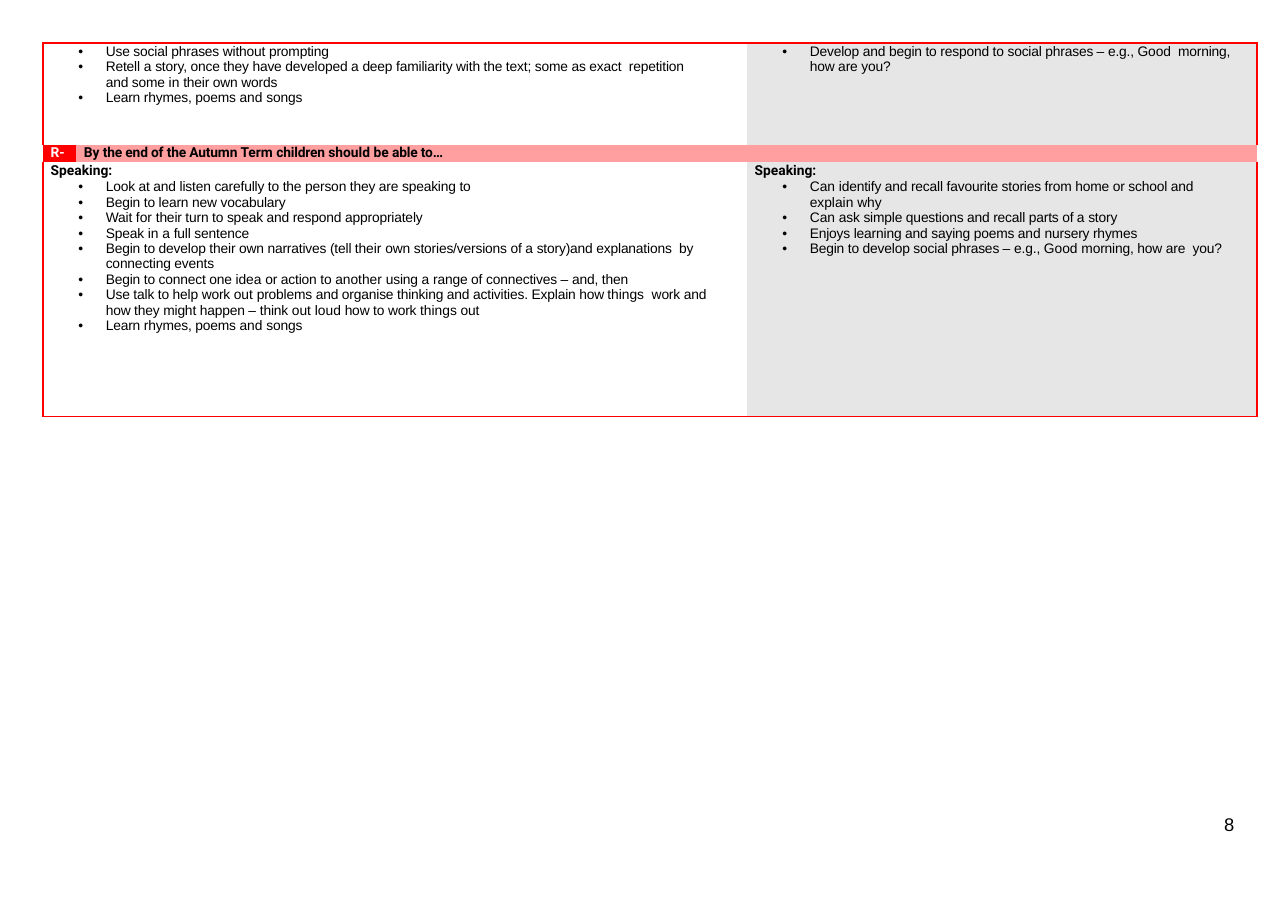
from lxml.etree import SubElement
from pptx import Presentation
from pptx.dml.color import RGBColor
from pptx.oxml import parse_xml
from pptx.oxml.ns import nsdecls, qn
from pptx.util import Inches, Pt

RED = RGBColor(0xFF, 0x00, 0x00)
PINK = RGBColor(0xFF, 0x9F, 0x9F)
GREY = RGBColor(0xE7, 0xE6, 0xE6)
BLACK = RGBColor(0x00, 0x00, 0x00)
WHITE = RGBColor(0xFF, 0xFF, 0xFF)

# A bar switches between slightly tight and normal letter spacing
EARLIER_GOALS = [
    "Use social phrases without prompting",
    "Retell |a |story, once they have developed |a |deep familiarity with the text; "
    "some as exact  repetition and some |in |their own words",
    "Learn rhymes, poems |and |songs",
]
EARLIER_SUPPORT = [
    "Develop and begin to respond to social phrases |– |e.g., Good  morning, how are you?",
]
AUTUMN_GOALS = [
    "Look at and listen carefully to the person they are speaking to",
    "Begin to learn new vocabulary",
    "Wait |for |their turn to speak and respond appropriately",
    "Speak |in a |full sentence",
    "Begin to develop their own narratives (tell |their |own stories/versions of |a |"
    "story)and explanations  by connecting events",
    "Begin to connect one |idea |or action to |another |using |a |range of connectives |"
    "– |and, then",
    "Use talk to help work |out |problems and organise thinking and activities. "
    "Explain how |things  |work and how they might happen |– |think |out loud |"
    "how to work |things |out",
    "Learn rhymes, poems |and |songs",
]
AUTUMN_SUPPORT = [
    "|Can |identify and recall favourite stories from home or school and  |explain why",
    "|Can |ask simple questions and recall parts of |a| story",
    "Enjoys learning and saying poems |and |nursery rhymes",
    "Begin to develop social phrases |– |e.g., |Good |morning, how are  you?",
]


class SlideWriter:
    def __init__(self, slide, font="Arial", heading_font="Roboto", size=9):
        self.s = slide
        self.font, self.heading_font, self.size = font, heading_font, size

    def runs(self, p, text, font=None, size=None, color=BLACK, bold=False):
        for i, part in enumerate(text.split("|")):
            if not part:
                continue
            r = p.add_run()
            r.text = part
            r.font.name = font or self.font
            r.font.size = Pt(size or self.size)
            r.font.bold = bold
            r.font.color.rgb = color
            r._r.get_or_add_rPr().set("spc", "0" if i % 2 else "-10")

    def indent(self, p, left, first=0):
        pPr = p._p.get_or_add_pPr()
        pPr.set("marL", str(Inches(left)))
        pPr.set("indent", str(Inches(first)))
        return pPr

    def heading(self, p, text, color=BLACK, line=None):
        self.indent(p, 0.07)
        if line:
            p.line_spacing = Pt(line)
        self.runs(p, text, self.heading_font, color=color, bold=True)

    def bullet(self, p, text):
        pPr = self.indent(p, 0.57, -0.25)
        SubElement(pPr, qn("a:buFont")).set("typeface", self.font)
        SubElement(pPr, qn("a:buChar")).set("char", "•")
        self.runs(p, text)

    def bullet_cell(self, cell, items, right, title=None):
        tf = cell.text_frame
        cell.margin_right = Inches(right)
        if title:
            self.heading(tf.paragraphs[0], title)
        for i, item in enumerate(items):
            p = tf.add_paragraph() if i or title else tf.paragraphs[0]
            self.bullet(p, item)

    def borders(self, cell, red_sides):
        tcPr = cell._tc.get_or_add_tcPr()
        for i, side in enumerate("LRTB"):
            paint = (f'<a:solidFill><a:srgbClr val="{RED}"/></a:solidFill>'
                     if side in red_sides else "<a:noFill/>")
            tcPr.insert(i, parse_xml(
                f'<a:ln{side} {nsdecls("a")} w="{Pt(1)}">{paint}</a:ln{side}>'))

    def table(self, x, y, widths, heights):
        tb = self.s.shapes.add_table(
            len(heights), len(widths), Inches(x), Inches(y),
            Inches(sum(widths)), Inches(sum(heights))).table
        tb.first_row = tb.horz_banding = False
        for col, w in zip(tb.columns, widths):
            col.width = Inches(w)
        for row, h in zip(tb.rows, heights):
            row.height = Inches(h)
        for cell in tb.iter_cells():
            cell.margin_left = cell.margin_right = 0
            cell.margin_top = cell.margin_bottom = 0
            cell.fill.background()
        return tb

    def fill(self, cell, color):
        cell.fill.solid()
        cell.fill.fore_color.rgb = color

    def label(self, x, y, w, h, text, size):
        tf = self.s.shapes.add_textbox(Inches(x), Inches(y), Inches(w), Inches(h)).text_frame
        tf.word_wrap = True
        tf.margin_left = tf.margin_right = tf.margin_bottom = 0
        tf.margin_top = Inches(0.01)
        p = tf.paragraphs[0]
        self.indent(p, 0.04)
        p.space_before = Pt(1.1)
        self.runs(p, text, size=size)


def main():
    prs = Presentation()
    prs.slide_width, prs.slide_height = Inches(11.69), Inches(8.27)
    w = SlideWriter(prs.slides.add_slide(prs.slide_layouts[6]))

    # Page number
    w.label(11.07, 7.37, 0.27, 0.23, "8", 12)

    # Table grid: outer frame in red, the term row open on the left
    tb = w.table(0.39, 0.39, [0.3, 6.09, 4.63], [0.93, 0.15, 2.31])
    for row in range(3):
        for col in range(3):
            sides = ("L" if col == 0 and row != 1 else "") + ("R" if col == 2 else "")
            sides += {0: "T", 2: "B"}.get(row, "")
            w.borders(tb.cell(row, col), sides)
    for row, first in ((0, 0), (1, 1), (2, 0)):
        tb.cell(row, first).merge(tb.cell(row, first + 1))

    # Goals on the left, support on the right
    for row, title, goals, support in (
            (0, None, EARLIER_GOALS, EARLIER_SUPPORT),
            (2, "|Speaking:", AUTUMN_GOALS, AUTUMN_SUPPORT)):
        w.bullet_cell(tb.cell(row, 0), goals, 0.36, title)
        w.bullet_cell(tb.cell(row, 2), support, 0.24, title)
        w.fill(tb.cell(row, 2), GREY)
        tb.cell(row, 0).margin_top = tb.cell(row, 2).margin_top = Inches(0.01)

    # Term row
    for col, color, ink, text in (
            (0, RED, WHITE, "|R-"),
            (1, PINK, BLACK, "|By |the end of the Autumn |Term |children |should be |able to…")):
        # The bar order starts with normal spacing here
        w.fill(tb.cell(1, col), color)
        w.heading(tb.cell(1, col).text_frame.paragraphs[0], text, ink, 10.1)

    prs.save("out.pptx")


if __name__ == "__main__":
    main()
